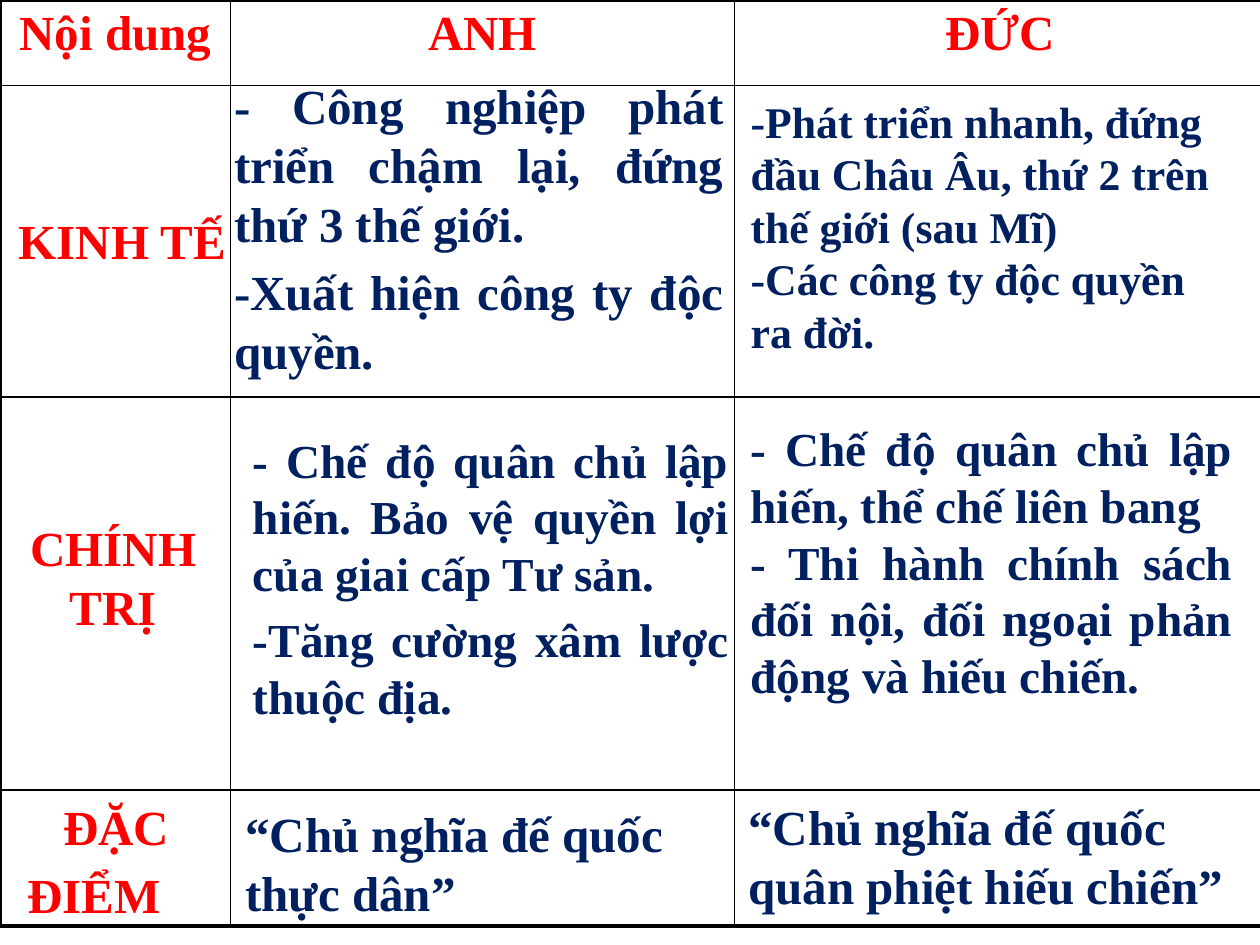
from lxml.etree import SubElement
from pptx import Presentation
from pptx.dml.color import RGBColor
from pptx.enum.text import MSO_AUTO_SIZE, PP_ALIGN
from pptx.oxml.ns import qn
from pptx.util import Inches, Pt

RED = RGBColor(0xFF, 0x00, 0x00)
NAVY = RGBColor(0x00, 0x20, 0x60)
LEFT, CENTER, JUSTIFY = PP_ALIGN.LEFT, PP_ALIGN.CENTER, PP_ALIGN.JUSTIFY

COLUMNS = [1.83, 4, 4.21]
ROWS = [0.68, 2.47, 3.12, 1.08]
HEADERS = ["Nội dung", "ANH", "ĐỨC"]
THIN, THICK = 1, 2.25

# Box (left, top, width, height), colour, size, space before, [(text, alignment)]
TEXTS = [
    # Row labels
    ((0.05, 1.62, 2.16, 0.57), RED, 28, 0, [("KINH TẾ", LEFT)]),
    ((0.04, 4.06, 1.72, 1.05), RED, 28, 0, [("CHÍNH TRỊ", CENTER)]),
    ((0.12, 6.27, 1.7, 1.14), RED, 28, 5.6, [("ĐẶC ", CENTER), ("ĐIỂM", LEFT)]),
    # Anh
    ((1.76, 0.55, 4.08, 2.55), NAVY, 28, 5.6, [
        ("- Công nghiệp phát triển chậm lại, đứng thứ 3 thế giới.", JUSTIFY),
        ("-Xuất hiện công ty độc quyền.", JUSTIFY)]),
    ((1.91, 3.37, 3.97, 2.47), NAVY, 27, 5.4, [
        ("- Chế độ quân chủ lập hiến. Bảo vệ quyền lợi của giai cấp Tư sản.", JUSTIFY),
        ("-Tăng cường xâm lược thuộc địa.", JUSTIFY)]),
    ((1.85, 6.33, 3.94, 1.05), NAVY, 28, 0, [("“Chủ nghĩa đế quốc thực dân”", LEFT)]),
    # Đức
    ((5.86, 0.7, 3.97, 2.21), NAVY, 25, 0, [
        ("-Phát triển nhanh, đứng đầu Châu Âu, thứ 2 trên thế giới (sau Mĩ)", LEFT),
        ("-Các công ty độc quyền ra đời.", LEFT)]),
    ((5.86, 3.28, 4.02, 2.38), NAVY, 27, 0, [
        ("- Chế độ quân chủ lập hiến, thể chế liên bang ", JUSTIFY),
        ("- Thi hành chính sách đối nội, đối ngoại phản động và hiếu chiến.", JUSTIFY)]),
    ((5.84, 6.27, 4.28, 1.05), NAVY, 28, 0, [
        ("“Chủ nghĩa đế quốc quân phiệt hiếu chiến”", LEFT)]),
]


def add_run(p, text, size, color):
    r = p.add_run()
    r.text = text
    font_format = {"name": "Times New Roman", "size": Pt(size), "bold": True}
    for name, value in font_format.items():
        setattr(r.font, name, value)
    r.font.color.rgb = color


def set_borders(cell, widths):
    tcPr = cell._tc.get_or_add_tcPr()
    for side, width in widths.items():
        ln = SubElement(tcPr, qn("a:ln" + side), w=str(Pt(width)))
        fill = SubElement(ln, qn("a:solidFill"))
        SubElement(fill, qn("a:srgbClr"), val="000000")


def add_grid(s):
    frame = s.shapes.add_table(len(ROWS), len(COLUMNS), 0, 0,
                               Inches(sum(COLUMNS)), Inches(sum(ROWS)))
    table = frame.table
    table.first_row = table.horz_banding = False
    for column, width in zip(table.columns, COLUMNS):
        column.width = Inches(width)
    for row, height in zip(table.rows, ROWS):
        row.height = Inches(height)

    # Thick outer frame, thin inner lines
    last_row, last_col = len(ROWS) - 1, len(COLUMNS) - 1
    for i in range(len(ROWS)):
        for j in range(len(COLUMNS)):
            cell = table.cell(i, j)
            set_borders(cell, {
                "L": THICK if j == 0 else THIN,
                "R": THICK if j == last_col else THIN,
                "T": THICK if i == 0 else THIN,
                "B": THICK if i == last_row else THIN,
            })
            cell.fill.background()

    # Column headings
    for j, heading in enumerate(HEADERS):
        p = table.cell(0, j).text_frame.paragraphs[0]
        p.alignment = CENTER
        add_run(p, heading, 28, RED)


def add_text(s, box, color, size, space_before, paragraphs):
    tf = s.shapes.add_textbox(*(Inches(v) for v in box)).text_frame
    tf.word_wrap = True
    tf.auto_size = MSO_AUTO_SIZE.SHAPE_TO_FIT_TEXT
    for i, (text, alignment) in enumerate(paragraphs):
        p = tf.add_paragraph() if i else tf.paragraphs[0]
        p.alignment = alignment
        if i and space_before:
            p.space_before = Pt(space_before)
        add_run(p, text, size, color)


def main():
    prs = Presentation()
    prs.slide_width, prs.slide_height = Inches(10), Inches(7.5)
    s = prs.slides.add_slide(prs.slide_layouts[6])
    add_grid(s)
    for item in TEXTS:
        add_text(s, *item)
    prs.save("out.pptx")


if __name__ == "__main__":
    main()
